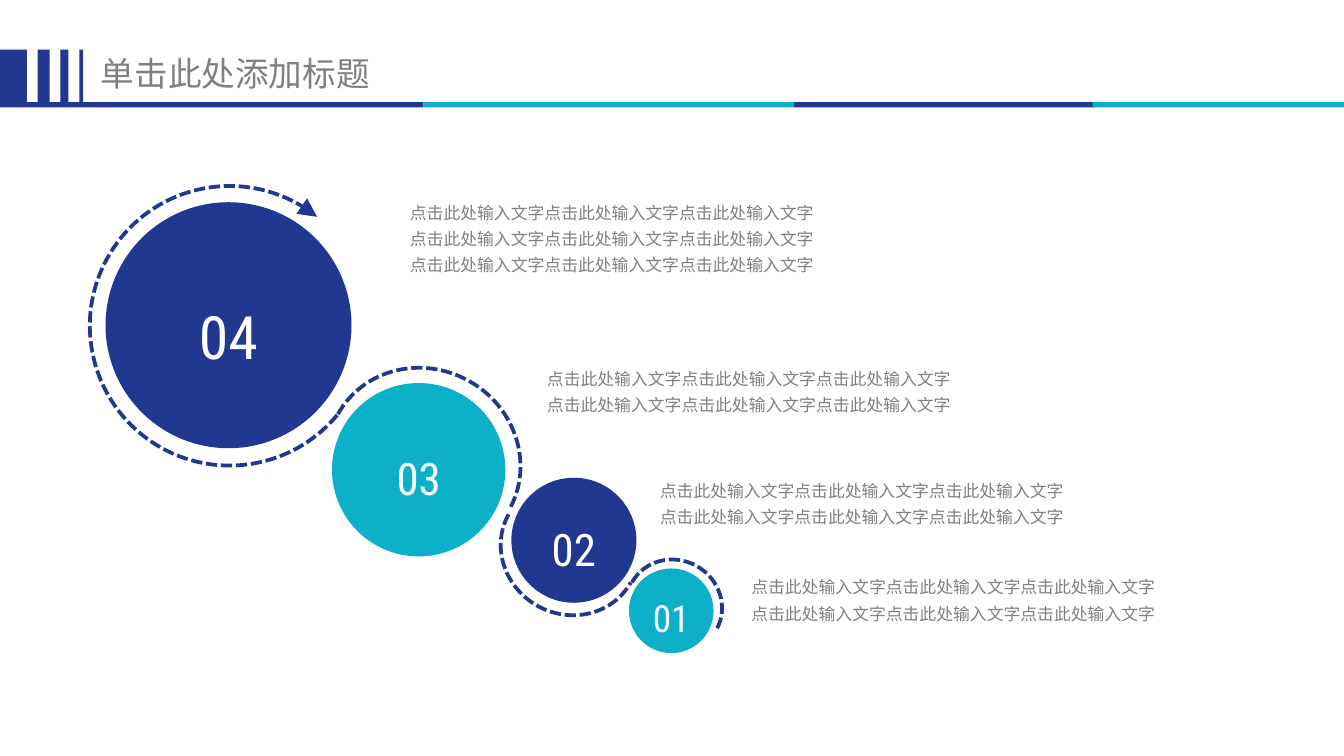
from math import ceil, cos, floor, radians, sin, tan
from typing import NamedTuple

from pptx import Presentation
from pptx.dml.color import RGBColor
from pptx.enum.dml import MSO_LINE
from pptx.enum.shapes import MSO_SHAPE as Shape
from pptx.enum.text import MSO_ANCHOR as Anchor, MSO_AUTO_SIZE as AutoSize, PP_ALIGN as Align
from pptx.oxml.ns import qn
from pptx.util import Inches, Pt

NAVY, TEAL, GRAY, WHITE = "20388F", "0CB1C9", "808080", "FFFFFF"
CJK_FONT = "Noto Sans CJK SC"
ARC_TILT = 29.1
SENTENCE = "点击此处输入文字" * 3


class Bar(NamedTuple):
    left: float
    top: float
    width: float
    height: float
    color: str


class Step(NamedTuple):
    number: str
    left: float
    top: float
    diameter: float
    color: str
    size: int
    outlined: bool


class Note(NamedTuple):
    left: float
    top: float
    width: float
    height: float
    lines: int


class Arc(NamedTuple):
    """An elliptical arc, in degrees clockwise from the right, before tilting."""
    center_x: float
    center_y: float
    radius_x: float
    radius_y: float
    start: float
    end: float
    arrow: bool = False


BARS = [Bar(left, 0.37, width, 0.39, NAVY)
        for left, width in [(0, 0.2), (0.28, 0.09), (0.45, 0.06), (0.59, 0.03)]]
BARS += [Bar(left, 0.76, width, 0.04, color)
         for left, width, color in [(0, 3.15, NAVY), (3.15, 2.76, TEAL),
                                    (5.91, 2.24, NAVY), (8.13, 1.87, TEAL)]]
ARCS = [
    Arc(1.71, 2.42, 1.04, 1.04, 10.6, 279.7, arrow=True),
    Arc(3.32, 3.48, 0.73, 0.69, 180, 360),
    Arc(4.12, 4.05, 0.52, 0.49, 180, 0),
    Arc(5.1, 4.53, 0.36, 0.34, 180, 360),
]
STEPS = [
    Step("04", 0.79, 1.51, 1.82, NAVY, 32, True),
    Step("03", 2.47, 2.85, 1.29, TEAL, 24, False),
    Step("02", 3.81, 3.56, 0.92, NAVY, 24, True),
    Step("01", 4.68, 4.23, 0.63, TEAL, 20, False),
]
NOTES = [
    Note(2.98, 1.42, 4.59, 0.67, 3),
    Note(4, 2.66, 4.3, 0.47, 2),
    Note(4.84, 3.49, 4.17, 0.47, 2),
    Note(5.52, 4.21, 4.21, 0.47, 2),
]


def rgb(color: str) -> RGBColor:
    return RGBColor.from_string(color)


def format_frame(frame, margin_x: float, margin_y: float, anchor) -> None:
    settings = {
        "margin_left": Inches(margin_x), "margin_right": Inches(margin_x),
        "margin_top": Inches(margin_y), "margin_bottom": Inches(margin_y),
        "vertical_anchor": anchor, "word_wrap": True, "auto_size": AutoSize.NONE,
    }
    for name, value in settings.items():
        setattr(frame, name, value)


def write(para, text: str, size: int, font: str, color: str, align, spacing: float) -> None:
    para.alignment = align
    para.line_spacing = spacing
    span = para.add_run()
    span.text = text
    span.font.size = Pt(size)
    span.font.name = font
    span.font.color.rgb = rgb(color)
    east_asian = span.font._element.makeelement(qn("a:ea"), {"typeface": CJK_FONT})
    span.font._element.find(qn("a:latin")).addnext(east_asian)


def add_solid(page, kind, left: float, top: float, width: float, height: float, color: str):
    shape = page.shapes.add_shape(kind, Inches(left), Inches(top), Inches(width), Inches(height))
    shape.shadow.inherit = False
    shape.fill.solid()
    shape.fill.fore_color.rgb = rgb(color)
    shape.line.fill.background()
    return shape


def add_step(page, step: Step) -> None:
    circle = add_solid(page, Shape.OVAL, step.left, step.top,
                       step.diameter, step.diameter, step.color)
    if step.outlined:
        circle.line.color.rgb = rgb(step.color)
        circle.line.width = Pt(0.75)
    format_frame(circle.text_frame, 0, 0, Anchor.MIDDLE)
    write(circle.text_frame.paragraphs[0], step.number, step.size,
          "Roboto Condensed", WHITE, Align.CENTER, 1.3)


def add_note(page, note: Note) -> None:
    box = page.shapes.add_textbox(Inches(note.left), Inches(note.top),
                                  Inches(note.width), Inches(note.height))
    frame = box.text_frame
    format_frame(frame, 0.07, 0.04, Anchor.TOP)
    for index in range(note.lines):
        para = frame.add_paragraph() if index else frame.paragraphs[0]
        write(para, SENTENCE, 9, "Calibri", GRAY, Align.JUSTIFY, 1.3)


def arc_points(arc: Arc) -> list[tuple[int, int]]:
    """Return the start point, then three Bezier points for each quarter turn."""
    def point(angle: float, tangent: float = 0) -> tuple[int, int]:
        x = cos(angle) - tangent * sin(angle)
        y = sin(angle) + tangent * cos(angle)
        return (Inches(arc.center_x + arc.radius_x * x),
                Inches(arc.center_y + arc.radius_y * y))

    low, high = sorted((arc.start, arc.end))
    quarters = [90 * turn for turn in range(floor(low / 90) + 1, ceil(high / 90))]
    angles = [radians(angle) for angle in [low, *quarters, high]]
    if arc.start > arc.end:
        angles.reverse()
    points = [point(angles[0])]
    for begin, finish in zip(angles, angles[1:]):
        handle = 4 / 3 * tan((finish - begin) / 4)
        points += [point(begin, handle), point(finish, -handle), point(finish)]
    return points


def add_arc(page, arc: Arc) -> None:
    start, *others = arc_points(arc)
    builder = page.shapes.build_freeform(*start, scale=1.0)
    builder.add_line_segments(others, close=False)
    shape = builder.convert_to_shape()
    segments = list(shape._element.iter(qn("a:lnTo")))
    for index in range(0, len(segments), 3):
        curve = segments[index].makeelement(qn("a:cubicBezTo"), {})
        segments[index].addprevious(curve)
        for segment in segments[index:index + 3]:
            curve.append(segment[0])
            segment.getparent().remove(segment)
    shape.rotation = ARC_TILT
    shape.shadow.inherit = False
    shape.fill.background()
    shape.line.color.rgb = rgb(NAVY)
    shape.line.width = Pt(2)
    shape.line.dash_style = MSO_LINE.SQUARE_DOT
    if arc.arrow:
        outline = shape.line._get_or_add_ln()
        arrowhead = {"type": "triangle", "w": "lg", "len": "lg"}
        outline.append(outline.makeelement(qn("a:tailEnd"), arrowhead))


def add_title(page) -> None:
    title = page.shapes.title
    place = {"left": 0.68, "top": 0.35, "width": 2.67, "height": 0.38}
    for name, value in place.items():
        setattr(title, name, Inches(value))
    format_frame(title.text_frame, 0.07, 0.04, Anchor.TOP)
    write(title.text_frame.paragraphs[0], "单击此处添加标题", 18, CJK_FONT, GRAY, Align.LEFT, 1.0)


def main() -> None:
    deck = Presentation()
    deck.slide_width = Inches(10)
    deck.slide_height = deck.slide_width * 9 // 16
    page = deck.slides.add_slide(deck.slide_layouts[5])
    add_title(page)
    for bar in BARS:
        add_solid(page, Shape.RECTANGLE, *bar)
    for arc in ARCS:
        add_arc(page, arc)
    for step in STEPS:
        add_step(page, step)
    for note in NOTES:
        add_note(page, note)
    deck.save("out.pptx")


if __name__ == "__main__":
    main()
